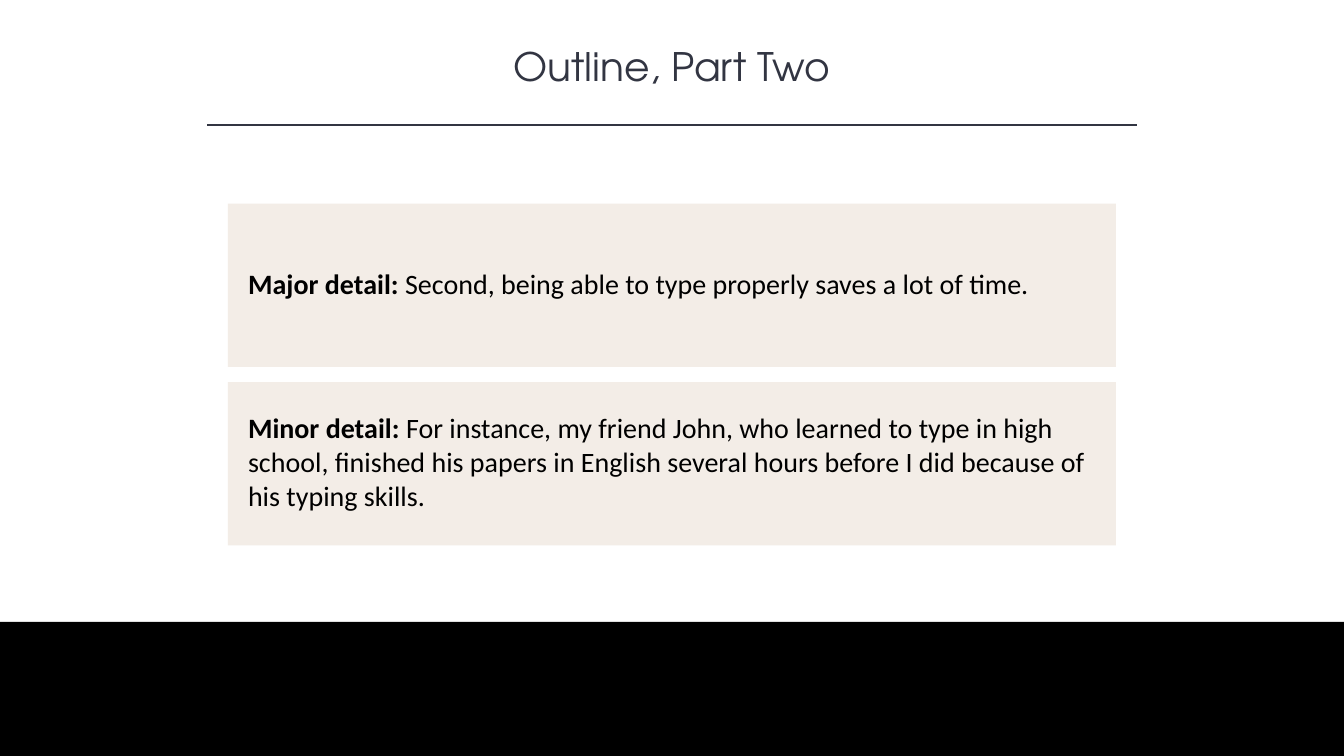
import dataclasses

import pptx
import pptx.dml.color
import pptx.enum.shapes
import pptx.enum.text
import pptx.oxml
import pptx.util

Pt = pptx.util.Pt
ANCHOR = pptx.enum.text.MSO_ANCHOR
ALIGN = pptx.enum.text.PP_ALIGN


@dataclasses.dataclass(frozen=True)
class Theme:
    ink: str = "323542"
    panel: str = "F3EDE7"
    black: str = "000000"
    title_font: str = "TeX Gyre Adventor"
    body_font: str = "Calibri"
    title_size: int = 28
    body_size: int = 20


class SlideBuilder:
    def __init__(self, slide, theme):
        self.slide = slide
        self.theme = theme

    def color(self, value):
        return pptx.dml.color.RGBColor.from_string(value)

    def run(self, paragraph, text, font, size, color, bold=False):
        run = paragraph.add_run()
        run.text = text
        run.font.name = font
        run.font.size = Pt(size)
        run.font.bold = bold
        run.font.color.rgb = self.color(color)

    def title(self, text, left, top, width, height):
        shape = self.slide.shapes.add_textbox(Pt(left), Pt(top), Pt(width), Pt(height))
        shape.text_frame.word_wrap = True
        paragraph = shape.text_frame.paragraphs[0]
        paragraph.alignment = ALIGN.CENTER
        theme = self.theme
        self.run(paragraph, text, theme.title_font, theme.title_size, theme.ink)

    def rule(self, left, right, y):
        line = self.slide.shapes.add_connector(
            pptx.enum.shapes.MSO_CONNECTOR.STRAIGHT, Pt(left), Pt(y), Pt(right), Pt(y))
        line.line.color.rgb = self.color(self.theme.ink)
        line.line.width = Pt(1)
        properties = line._element.spPr
        properties.append(properties.makeelement(pptx.oxml.ns.qn("a:effectLst"), {}))

    def block(self, left, top, width, height, fill):
        shape = self.slide.shapes.add_shape(
            pptx.enum.shapes.MSO_SHAPE.RECTANGLE, Pt(left), Pt(top), Pt(width), Pt(height))
        shape.shadow.inherit = False
        shape.fill.solid()
        shape.fill.fore_color.rgb = self.color(fill)
        shape.line.fill.background()
        return shape

    def detail(self, label, text, left, top, width, height):
        theme = self.theme
        frame = self.block(left, top, width, height, theme.panel).text_frame
        frame.word_wrap = True
        frame.vertical_anchor = ANCHOR.MIDDLE
        frame.margin_left = Pt(14.4)
        frame.margin_right = Pt(19.4)
        frame.margin_top = Pt(0)
        frame.margin_bottom = Pt(3.6)
        paragraph = frame.paragraphs[0]
        paragraph.alignment = ALIGN.LEFT
        self.run(paragraph, label, theme.body_font, theme.body_size, theme.black, bold=True)
        self.run(paragraph, text, theme.body_font, theme.body_size, theme.black)


def main():
    presentation = pptx.Presentation()
    presentation.slide_width = Pt(960)
    presentation.slide_height = Pt(540)
    slide = presentation.slides.add_slide(presentation.slide_layouts[6])
    builder = SlideBuilder(slide, Theme())

    # Heading
    builder.title("Outline, Part Two", 120, 26.6, 720, 41)
    builder.rule(148, 812, 89.4)

    # Detail panels
    details = [
        ("Major detail: ", "Second, being able to type properly saves a lot of time."),
        ("Minor detail: ", "For instance, my friend John, who learned to type in high school, "
         "finished his papers in English several hours before I did because of "
         "his typing skills."),
    ]
    panel_height, gap = 116.6, 10.9
    for index, (label, text) in enumerate(details):
        top = 145.5 + index * (panel_height + gap)
        builder.detail(label, text, 162.8, top, 634.4, panel_height)

    # Bottom band
    builder.block(0, 444.2, 960, 95.8, builder.theme.black)

    presentation.save("out.pptx")


if __name__ == "__main__":
    main()
